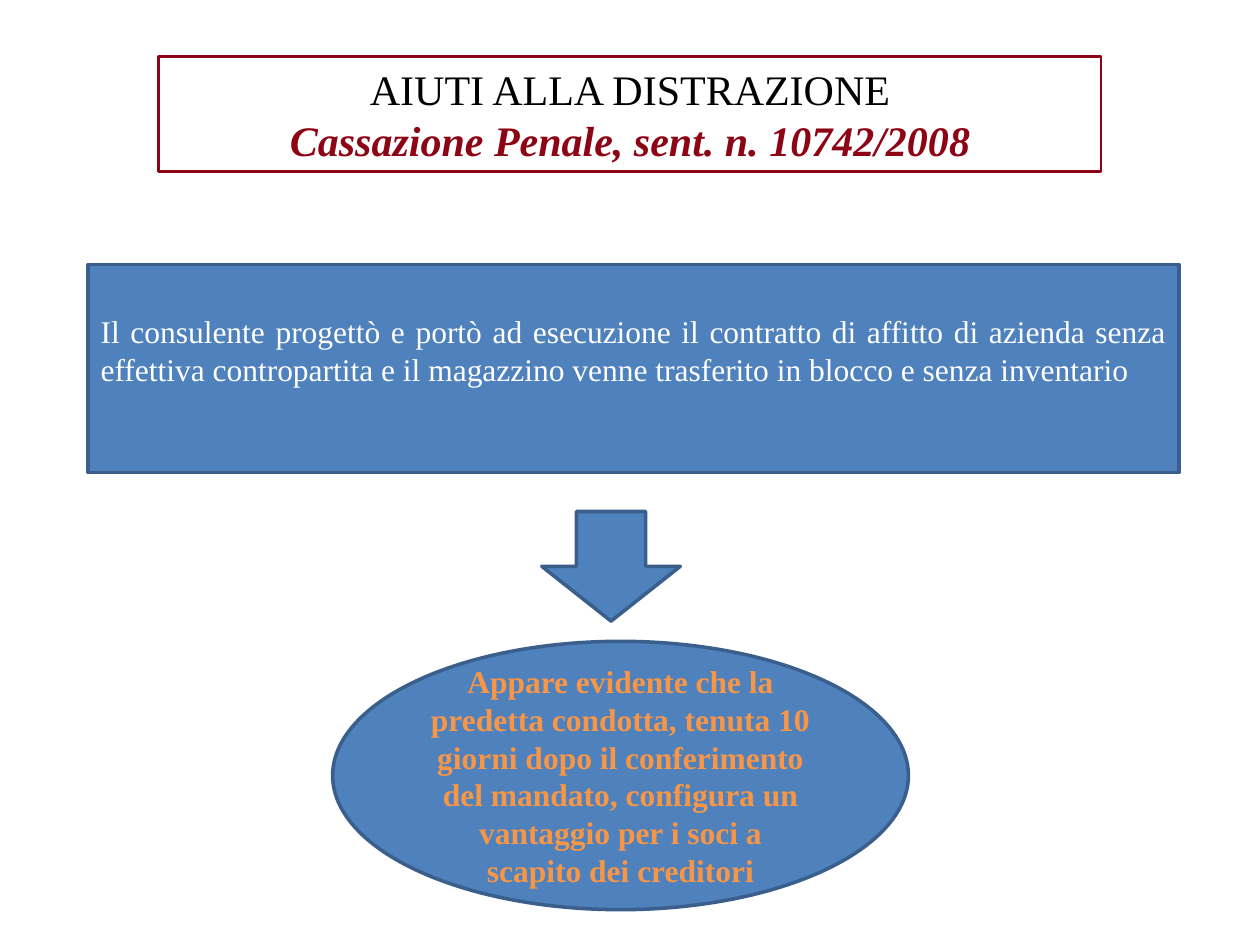
from dataclasses import dataclass
from typing import Optional

from pptx import Presentation
from pptx import util as u
from pptx.dml.color import RGBColor
from pptx.enum import shapes, text

FONT = "Times New Roman"
BLACK = RGBColor(0x00, 0x00, 0x00)
WHITE = RGBColor(0xFF, 0xFF, 0xFF)
DARK_RED = RGBColor(0x8D, 0x05, 0x15)
BLUE = RGBColor(0x4F, 0x81, 0xBD)
DARK_BLUE = RGBColor(0x3A, 0x5F, 0x8C)
ORANGE = RGBColor(0xF7, 0x96, 0x46)


@dataclass(frozen=True)
class Line:
    """One paragraph and its look."""
    wording: str
    size: int
    color: RGBColor
    bold: bool = False
    italic: bool = False
    alignment: text.PP_ALIGN = text.PP_ALIGN.CENTER


@dataclass(frozen=True)
class Box:
    kind: shapes.MSO_SHAPE
    left: float
    top: float
    width: float
    height: float
    lines: tuple[Line, ...] = ()
    fill: Optional[RGBColor] = BLUE
    outline: RGBColor = DARK_BLUE
    outline_width: float = 2
    bottom_margin: float = 0.05


BOXES = (
    Box(shapes.MSO_SHAPE.RECTANGLE, 1.26, 0.45, 7.48, 0.91,
        (Line("AIUTI ALLA DISTRAZIONE", 24, BLACK),
         Line("Cassazione Penale, sent. n. 10742/2008", 24, DARK_RED, bold=True, italic=True)),
        fill=None, outline=DARK_RED, outline_width=1.5),
    Box(shapes.MSO_SHAPE.RECTANGLE, 0.7, 2.1, 8.66, 1.65,
        (Line("Il consulente progettò e portò ad esecuzione il contratto di affitto di azienda "
              "senza effettiva contropartita e il magazzino venne trasferito in blocco e senza "
              "inventario", 18, WHITE, alignment=text.PP_ALIGN.JUSTIFY),),
        bottom_margin=0.34),
    Box(shapes.MSO_SHAPE.DOWN_ARROW, 4.3, 4.06, 1.1, 0.87),
    Box(shapes.MSO_SHAPE.OVAL, 2.64, 5.09, 4.57, 2.13,
        (Line("Appare evidente che la predetta condotta, tenuta 10 giorni dopo il conferimento "
              "del mandato, configura un vantaggio per i soci a scapito dei creditori",
              18, ORANGE, bold=True),)),
)


def write_lines(frame, lines: tuple[Line, ...]) -> None:
    for index, line in enumerate(lines):
        paragraph = frame.add_paragraph() if index else frame.paragraphs[0]
        paragraph.text = line.wording
        paragraph.alignment = line.alignment
        font = paragraph.font
        font.name = FONT
        font.size = u.Pt(line.size)
        font.bold = line.bold
        font.italic = line.italic
        font.color.rgb = line.color


def draw_box(slide, box: Box) -> None:
    shape = slide.shapes.add_shape(
        box.kind, u.Inches(box.left), u.Inches(box.top),
        u.Inches(box.width), u.Inches(box.height))
    shape.shadow.inherit = False
    if box.fill is None:
        shape.fill.background()
    else:
        shape.fill.solid()
        shape.fill.fore_color.rgb = box.fill
    shape.line.color.rgb = box.outline
    shape.line.width = u.Pt(box.outline_width)
    frame = shape.text_frame
    frame.word_wrap = True
    frame.vertical_anchor = text.MSO_ANCHOR.MIDDLE
    frame.margin_bottom = u.Inches(box.bottom_margin)
    write_lines(frame, box.lines)


def main() -> None:
    presentation = Presentation()
    presentation.slide_width = u.Inches(10)
    presentation.slide_height = u.Inches(7.5)
    slide = presentation.slides.add_slide(presentation.slide_layouts[6])
    for box in BOXES:
        draw_box(slide, box)
    presentation.save("out.pptx")


if __name__ == "__main__":
    main()
